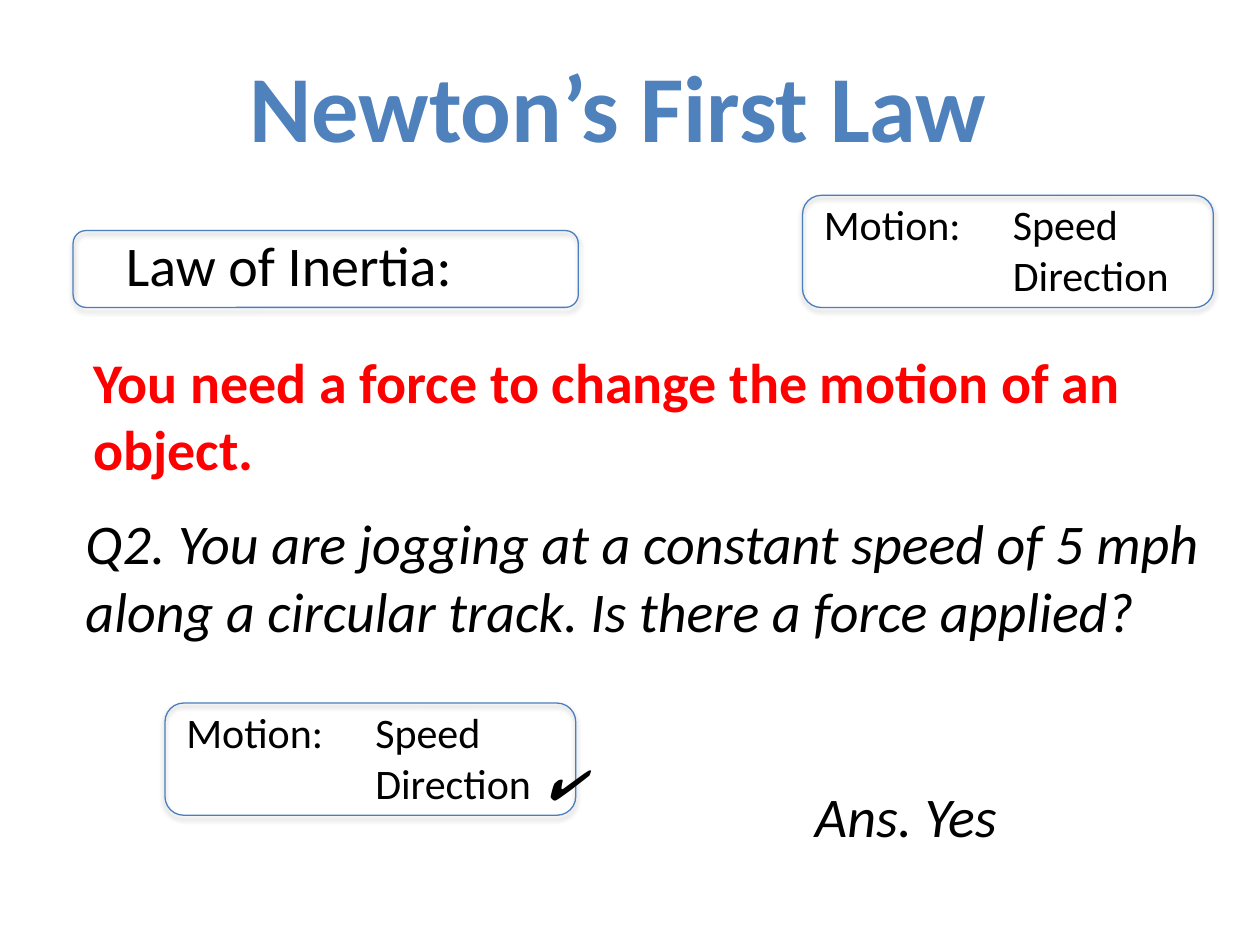
from dataclasses import dataclass

from lxml import etree
from pptx import Presentation
from pptx.dml.color import RGBColor
from pptx.enum.shapes import MSO_SHAPE
from pptx.enum.text import MSO_ANCHOR, MSO_AUTO_SIZE, PP_ALIGN
from pptx.oxml.ns import qn
from pptx.util import Inches, Pt

ROUNDED = MSO_SHAPE.ROUNDED_RECTANGLE
GROW = MSO_AUTO_SIZE.SHAPE_TO_FIT_TEXT
TOP, CENTER = MSO_ANCHOR.TOP, PP_ALIGN.CENTER

FONT = "Calibri"
BLACK, RED, BLUE, OUTLINE = "000000", "FF0000", "4F81BD", "4B7EBC"
SLIDE_WIDTH, SLIDE_HEIGHT = Inches(10), Inches(7.5)
TAB_STEP = Inches(0.5)
TAB_COUNT = 3


@dataclass(frozen=True)
class Area:
    """Position and size in percent of the slide."""
    left: float
    top: float
    width: float
    height: float

    def emu(self) -> tuple[int, ...]:
        return (int(SLIDE_WIDTH * self.left / 100), int(SLIDE_HEIGHT * self.top / 100),
                int(SLIDE_WIDTH * self.width / 100), int(SLIDE_HEIGHT * self.height / 100))


@dataclass(frozen=True)
class Passage:
    area: Area
    lines: tuple[str, ...]
    size: int = 32
    color: str = BLACK
    bold: bool = False
    italic: bool = False


@dataclass(frozen=True)
class Card:
    frame: Area
    label: Passage


def motion_card(left: float, top: float) -> Card:
    label = Passage(Area(left + 0.7, top - 0.27, 30.8, 12.13),
                    ("Motion: \tSpeed", "\t\t\tDirection"), size=24)
    return Card(Area(left, top, 32.6, 11.87), label)


TITLE = Passage(Area(18.1, 4.4, 61.9, 13.47), ("Newton’s First Law",),
                size=54, color=BLUE, bold=True)
CONTENT = (
    Card(Area(5.8, 24.4, 40.1, 8.13),
         Passage(Area(9, 23.73, 36.8, 8.53), ("Law of Inertia:",))),
    Passage(Area(6.4, 36.13, 87.5, 15.73),
            ("You need a force to change the motion of an object.",), color=RED, bold=True),
    Passage(Area(5.8, 53.2, 92.1, 15.73),
            ("Q2. You are jogging at a constant speed of 5 mph along a circular track. "
             "Is there a force applied?",), italic=True),
    motion_card(63.7, 20.67),
    motion_card(13.1, 74.4),
    Passage(Area(42.4, 79.6, 10.7, 6.67), ("✔",), size=24, italic=True),
    Passage(Area(63.7, 82, 25.7, 8.53), ("Ans. Yes",), italic=True),
)


def rgb(value: str) -> RGBColor:
    return RGBColor.from_string(value)


def add_tab_stops(paragraph) -> None:
    stops = etree.SubElement(paragraph._p.get_or_add_pPr(), qn("a:tabLst"))
    for step in range(1, TAB_COUNT + 1):
        etree.SubElement(stops, qn("a:tab"), pos=str(TAB_STEP * step), algn="l")


def write(frame, passage: Passage) -> None:
    frame.text = "\n".join(passage.lines)
    frame.word_wrap = True
    frame.auto_size = GROW
    for paragraph in frame.paragraphs:
        font = paragraph.font
        font.name, font.size = FONT, Pt(passage.size)
        font.bold, font.italic = passage.bold, passage.italic
        font.color.rgb = rgb(passage.color)
        if "\t" in paragraph.text:
            add_tab_stops(paragraph)


def add_passage(shapes, passage: Passage) -> None:
    write(shapes.add_textbox(*passage.area.emu()).text_frame, passage)


def add_soft_shadow(shape) -> None:
    shape.shadow.inherit = False
    effects = shape._element.spPr.find(qn("a:effectLst"))
    shadow = etree.SubElement(effects, qn("a:outerShdw"), blurRad=str(Pt(3.1)),
                              dist=str(Pt(1.8)), dir="5400000", rotWithShape="0")
    color = etree.SubElement(shadow, qn("a:srgbClr"), val=BLACK)
    etree.SubElement(color, qn("a:alpha"), val="35000")


def add_card(shapes, card: Card) -> None:
    group = shapes.add_group_shape()
    outline = group.shapes.add_shape(ROUNDED, *card.frame.emu())
    outline.fill.background()
    outline.line.color.rgb = rgb(OUTLINE)
    outline.line.width = Pt(0.75)
    add_soft_shadow(outline)
    add_passage(group.shapes, card.label)


def set_title(title, passage: Passage) -> None:
    title.left, title.top, title.width, title.height = passage.area.emu()
    write(title.text_frame, passage)
    title.text_frame.word_wrap = False
    title.text_frame.vertical_anchor = TOP
    title.text_frame.paragraphs[0].alignment = CENTER


def main() -> None:
    presentation = Presentation()
    presentation.slide_width, presentation.slide_height = SLIDE_WIDTH, SLIDE_HEIGHT
    slide = presentation.slides.add_slide(presentation.slide_layouts.get_by_name("Title Only"))
    set_title(slide.shapes.title, TITLE)
    for item in CONTENT:
        draw = add_card if isinstance(item, Card) else add_passage
        draw(slide.shapes, item)
    presentation.save("out.pptx")


if __name__ == "__main__":
    main()
